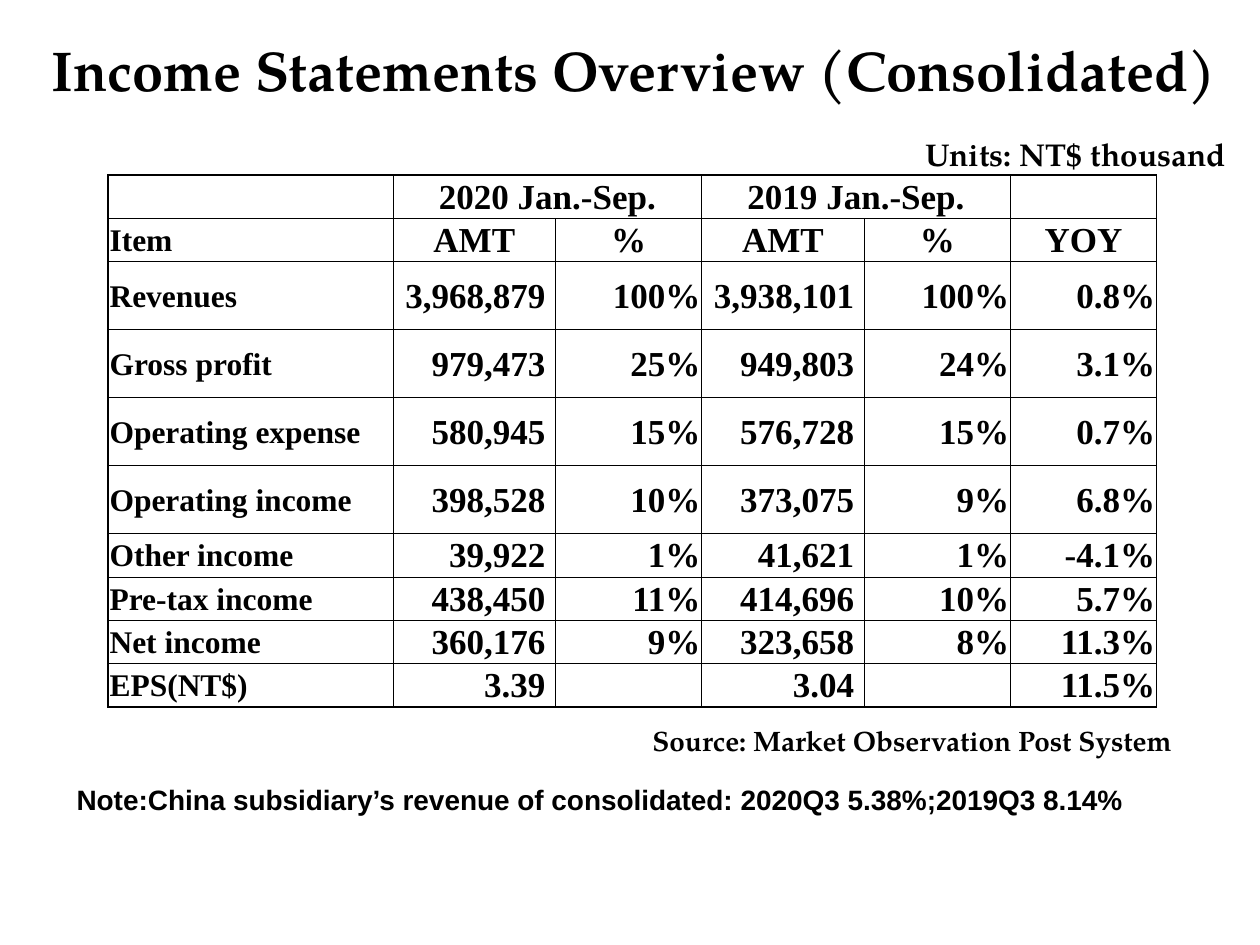
from lxml import etree
from pptx import Presentation, util as u
from pptx.dml.color import RGBColor
from pptx.enum import text
from pptx.oxml.ns import qn

COLORS = {"ink": "000000", "page": "FFFFFF"}
SERIF, DISPLAY, SANS = "Times New Roman", "TeX Gyre Pagella", "Arial"
LEFT, CENTER, RIGHT = text.PP_ALIGN.LEFT, text.PP_ALIGN.CENTER, text.PP_ALIGN.RIGHT

TITLE = "Income Statements Overview (Consolidated)"
TITLE_PLACE = (0.2, 0.17, 9.67, 0.75)
CAPTIONS = [
    ("Units: NT$ thousand", (7.25, 1.02, 2.76, 0.4), DISPLAY, 18),
    ("Source: Market Observation Post System", (5.08, 5.69, 4.34, 0.37), DISPLAY, 16),
    ("Note:China subsidiary’s revenue of consolidated: 2020Q3 5.38%;2019Q3 8.14%",
     (0.51, 6.16, 9.96, 0.94), SANS, 16),
]
HEADER_ROWS = 2
AMOUNT_COLUMNS = (1, 3)
ROWS = [
    ("", "2020 Jan.-Sep.", "", "2019 Jan.-Sep.", "", ""),
    ("Item", "AMT", "%", "AMT", "%", "YOY"),
    ("Revenues", "3,968,879", "100%", "3,938,101", "100%", "0.8%"),
    ("Gross profit", "979,473", "25%", "949,803", "24%", "3.1%"),
    ("Operating expense", "580,945", "15%", "576,728", "15%", "0.7%"),
    ("Operating income", "398,528", "10%", "373,075", "9%", "6.8%"),
    ("Other income", "39,922", "1%", "41,621", "1%", "-4.1%"),
    ("Pre-tax income", "438,450", "11%", "414,696", "10%", "5.7%"),
    ("Net income", "360,176", "9%", "323,658", "8%", "11.3%"),
    ("EPS(NT$)", "3.39", "", "3.04", "", "11.5%"),
]
TABLE_LEFT, TABLE_TOP = 0.86, 1.39
COLUMN_WIDTHS = [2.26] + [1.29, 1.16] * 2 + [1.16]
ROW_HEIGHTS = [0.34] * 2 + [0.54] * 4 + [0.34] * 4
THIN, THICK = 0.5, 1.5


def inches(place):
    return [u.Inches(length) for length in place]


def write(frame, words, font, size, align):
    frame.text = words
    para = frame.paragraphs[0]
    para.alignment = align
    for span in para.runs:
        span.font.name = font
        span.font.size = u.Pt(size)
        span.font.bold = True
        span.font.color.rgb = RGBColor.from_string(COLORS["ink"])


def draw_borders(cell, widths):
    properties = cell._tc.get_or_add_tcPr()
    for side, width in widths.items():
        line = etree.SubElement(properties, qn(f"a:ln{side}"), w=str(u.Pt(width)))
        fill = etree.SubElement(line, qn("a:solidFill"))
        etree.SubElement(fill, qn("a:srgbClr"), val=COLORS["ink"])


def add_caption(page, words, place, font, size):
    box = page.shapes.add_textbox(*inches(place))
    box.text_frame.word_wrap = True
    write(box.text_frame, words, font, size, LEFT)


def fill_cell(cell, words, row, column):
    if column == 0:
        size, align = 18, LEFT
    else:
        size, align = 20, CENTER if row < HEADER_ROWS else RIGHT
    amount = align == RIGHT and column in AMOUNT_COLUMNS
    cell.margin_left = cell.margin_top = u.Inches(0.01)
    cell.margin_right = u.Inches(0.08 if amount else 0.01)
    cell.margin_bottom = 0
    cell.vertical_anchor = text.MSO_ANCHOR.MIDDLE
    write(cell.text_frame, words, SERIF, size, align)
    draw_borders(cell, {
        "L": THICK if column == 0 else THIN,
        "R": THIN,
        "T": THICK if row == 0 else THIN,
        "B": THICK if row == len(ROWS) - 1 else THIN,
    })
    cell.fill.background()


def add_statement(page):
    place = (TABLE_LEFT, TABLE_TOP, sum(COLUMN_WIDTHS), sum(ROW_HEIGHTS))
    table = page.shapes.add_table(len(ROWS), len(COLUMN_WIDTHS), *inches(place)).table
    table.first_row = table.horz_banding = False
    for column, width in zip(table.columns, COLUMN_WIDTHS):
        column.width = u.Inches(width)
    for row, height in zip(table.rows, ROW_HEIGHTS):
        row.height = u.Inches(height)
    for row, values in enumerate(ROWS):
        for column, words in enumerate(values):
            fill_cell(table.cell(row, column), words, row, column)
    for column in AMOUNT_COLUMNS:
        table.cell(0, column).merge(table.cell(0, column + 1))


def main():
    deck = Presentation()
    deck.slide_width, deck.slide_height = inches((10, 7.5))
    page = deck.slides.add_slide(deck.slide_layouts[5])
    page.background.fill.solid()
    page.background.fill.fore_color.rgb = RGBColor.from_string(COLORS["page"])
    title = page.shapes.title
    title.left, title.top, title.width, title.height = inches(TITLE_PLACE)
    title.text_frame.vertical_anchor = text.MSO_ANCHOR.MIDDLE
    write(title.text_frame, TITLE, DISPLAY, 32, CENTER)
    for caption in CAPTIONS:
        add_caption(page, *caption)
    add_statement(page)
    deck.save("out.pptx")


if __name__ == "__main__":
    main()
